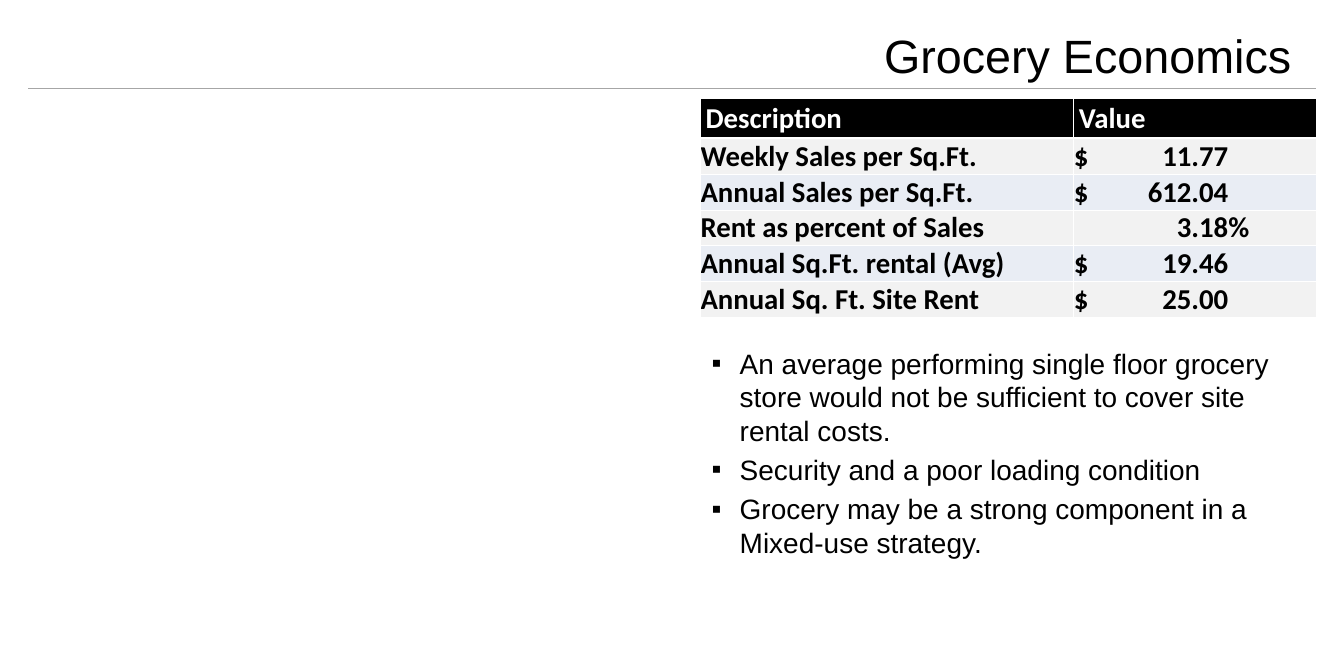
from lxml.etree import SubElement
from pptx import Presentation
from pptx.dml.color import RGBColor
from pptx.enum.shapes import MSO_CONNECTOR
from pptx.enum.text import MSO_ANCHOR, PP_ALIGN
from pptx.oxml.ns import qn
from pptx.util import Pt

COLORS = {
    "text": "000000",
    "header": "000000",
    "header_text": "FFFFFF",
    "border": "FFFFFF",
    "odd_row": "F2F2F2",
    "even_row": "E9EDF4",
    "rule": "A6A6A6",
}
COLUMN_LEFT, COLUMN_WIDTH = 900, 792
DECIMAL_TAB = 151.2
HEADER = ("Description", "Value")
ECONOMICS = [
    ("Weekly Sales per Sq.Ft.", "$\t11.77\t"),
    ("Annual Sales per Sq.Ft.", "$\t612.04"),
    ("Rent as percent of Sales", "\t3.18%"),
    ("Annual Sq.Ft. rental (Avg)", "$\t19.46"),
    ("Annual Sq. Ft. Site Rent", "$\t25.00"),
]
CONCLUSIONS = [
    "An average performing single floor grocery store would not be "
    "sufficient to cover site rental costs.",
    "Security and a poor loading condition",
    "Grocery may be a strong component in a Mixed-use strategy.",
]


class SlideBuilder:
    def __init__(self, slide):
        self.slide = slide
        self.text_font = "Arial"
        self.table_font = "Calibri"

    def add_run(self, paragraph, text, size, font, color="text", bold=False):
        run = paragraph.add_run()
        run.text = text
        run.font.size = Pt(size)
        run.font.name = font
        run.font.bold = bold
        run.font.color.rgb = RGBColor.from_string(COLORS[color])

    def add_rule(self, left, right, top):
        rule = self.slide.shapes.add_connector(
            MSO_CONNECTOR.STRAIGHT, Pt(left), Pt(top), Pt(right), Pt(top))
        rule.line.width = Pt(0.75)
        rule.line.color.rgb = RGBColor.from_string(COLORS["rule"])
        SubElement(rule._element.spPr, qn("a:effectLst"))

    def add_text_frame(self, top, height):
        """Add a text box across the right column and return its frame."""
        box = self.slide.shapes.add_textbox(
            Pt(COLUMN_LEFT), Pt(top), Pt(COLUMN_WIDTH), Pt(height))
        frame = box.text_frame
        frame.word_wrap = True
        frame.margin_left = frame.margin_right = Pt(15.12)
        frame.margin_top = frame.margin_bottom = Pt(7.2)
        return frame

    def add_title(self, text, top, height):
        frame = self.add_text_frame(top, height)
        frame.vertical_anchor = MSO_ANCHOR.BOTTOM
        paragraph = frame.paragraphs[0]
        paragraph.alignment = PP_ALIGN.RIGHT
        self.add_run(paragraph, text, 60, self.text_font)

    def add_bullets(self, items, top, height):
        frame = self.add_text_frame(top, height)
        for index, item in enumerate(items):
            paragraph = frame.add_paragraph() if index else frame.paragraphs[0]
            paragraph.space_before = Pt(7.2)
            properties = paragraph._p.get_or_add_pPr()
            properties.set("marL", str(Pt(36)))
            properties.set("indent", str(Pt(-36)))
            SubElement(properties, qn("a:buFont"), typeface="Arial")
            SubElement(properties, qn("a:buChar"), char="▪")
            self.add_run(paragraph, item, 36, self.text_font)

    def add_borders(self, cell, bottom_width):
        properties = cell._tc.get_or_add_tcPr()
        widths = {"a:lnL": 1, "a:lnR": 1, "a:lnT": 1, "a:lnB": bottom_width}
        for position, (side, width) in enumerate(widths.items()):
            line = SubElement(properties, qn(side), w=str(Pt(width)))
            fill = SubElement(line, qn("a:solidFill"))
            SubElement(fill, qn("a:srgbClr"), val=COLORS["border"])
            properties.insert(position, line)

    def add_cell(self, cell, text, fill, color="text", bottom_width=1):
        cell.fill.solid()
        cell.fill.fore_color.rgb = RGBColor.from_string(COLORS[fill])
        self.add_borders(cell, bottom_width)
        paragraph = cell.text_frame.paragraphs[0]
        self.add_run(paragraph, text, 37, self.table_font, color, bold=True)

    def add_body_cell(self, cell, text, fill):
        self.add_cell(cell, text, fill)
        cell.vertical_anchor = MSO_ANCHOR.BOTTOM
        cell.margin_left = cell.margin_right = cell.margin_top = Pt(0.72)
        cell.margin_bottom = Pt(0)
        properties = cell.text_frame.paragraphs[0]._p.get_or_add_pPr()
        tabs = SubElement(properties, qn("a:tabLst"))
        SubElement(tabs, qn("a:tab"), pos=str(Pt(DECIMAL_TAB)), algn="dec")

    def add_table(self, header, rows, top, column_widths, header_height, row_height):
        frame = self.slide.shapes.add_table(
            len(rows) + 1, len(header), Pt(COLUMN_LEFT), Pt(top),
            Pt(COLUMN_WIDTH), Pt(header_height + row_height * len(rows)))
        table = frame.table
        for column, width in zip(table.columns, column_widths):
            column.width = Pt(width)
        for row in table.rows:
            row.height = Pt(row_height)
        table.rows[0].height = Pt(header_height)
        for column, text in enumerate(header):
            self.add_cell(table.cell(0, column), text, "header", "header_text", 3)
        for row, values in enumerate(rows, start=1):
            fill = "odd_row" if row % 2 else "even_row"
            for column, text in enumerate(values):
                self.add_body_cell(table.cell(row, column), text, fill)


def main():
    presentation = Presentation()
    presentation.slide_width, presentation.slide_height = Pt(1728), Pt(864)
    slide = presentation.slides.add_slide(presentation.slide_layouts[6])
    builder = SlideBuilder(slide)
    builder.add_rule(36, 1692, 113.76)
    builder.add_title("Grocery Economics ", 34.56, 79.2)
    builder.add_bullets(CONCLUSIONS, 437.76, 334.08)
    builder.add_table(HEADER, ECONOMICS, 126, (480, 312), 52, 46)
    presentation.save("out.pptx")


if __name__ == "__main__":
    main()
